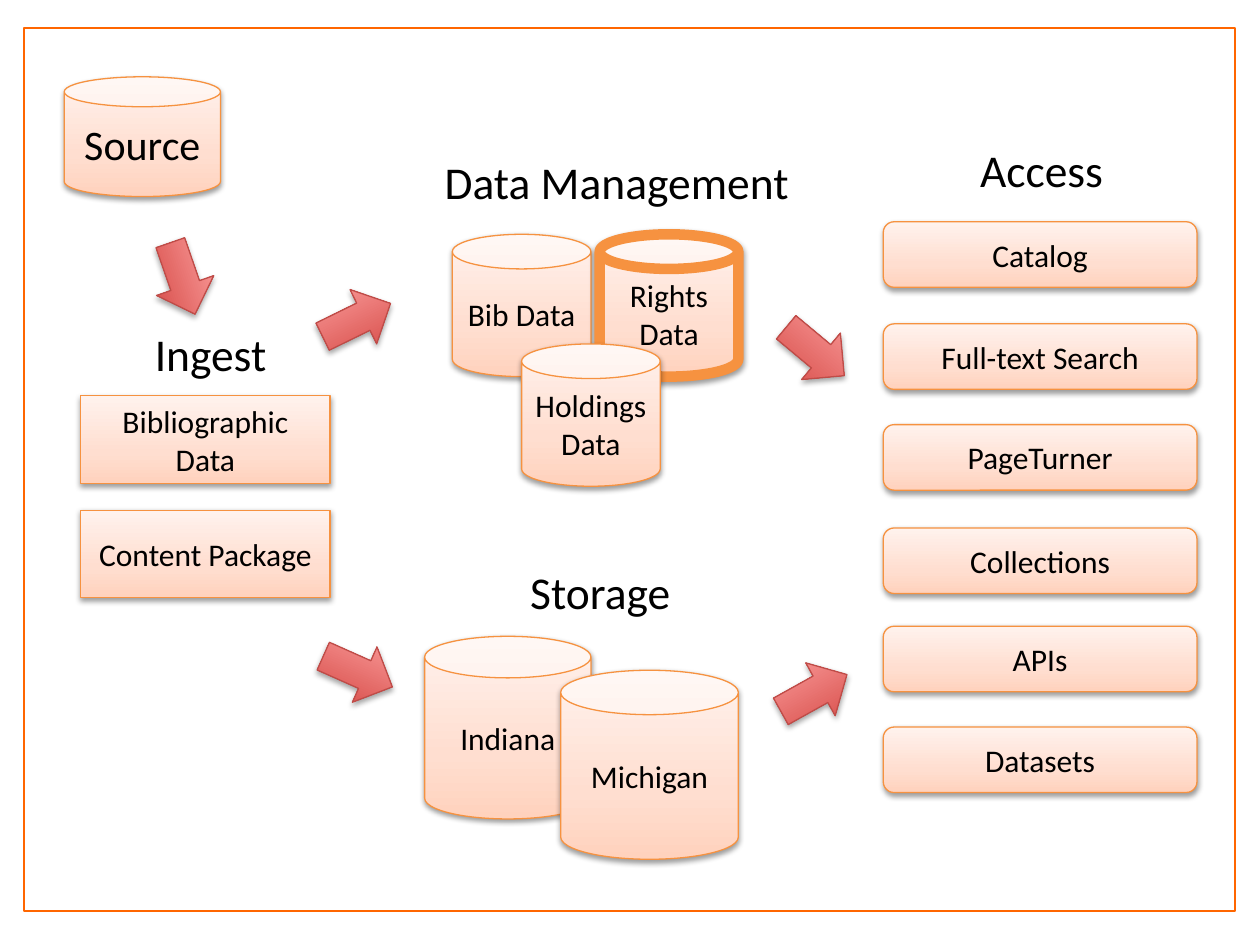
"""Build a slide showing a digital library's flow from source to access."""
from copy import deepcopy

from pptx import Presentation
from pptx.dml.color import RGBColor
from pptx.enum.shapes import MSO_SHAPE as Shape
from pptx.enum.text import MSO_ANCHOR, MSO_AUTO_SIZE, PP_ALIGN
from pptx.oxml import parse_xml
from pptx.oxml.ns import nsdecls
from pptx.util import Inches, Pt

BLACK = RGBColor(0x00, 0x00, 0x00)
WHITE = RGBColor(0xFF, 0xFF, 0xFF)
FRAME_ORANGE = RGBColor(0xFF, 0x66, 0x00)
ORANGE = RGBColor(0xF6, 0x92, 0x40)
RED = RGBColor(0xBF, 0x4C, 0x48)
PEACH_STOPS = [
    (0, RGBColor(0xFF, 0xD2, 0xBD)),
    (0.35, RGBColor(0xFF, 0xDE, 0xD0)),
    (1, RGBColor(0xFF, 0xF2, 0xED)),
]
RED_STOPS = [(0, RGBColor(0xD1, 0x40, 0x3C)), (1, RGBColor(0xFF, 0xA6, 0xA5))]
FONT = "Calibri"


def add_gradient_shape(kind, place, stops, line_color, line_width, opacity, distance):
    shape = slide.shapes.add_shape(kind, *map(Inches, place))
    shape.fill.gradient()
    shape.fill.gradient_angle = 90
    stop_list = shape._element.spPr.find(".//{*}gsLst")
    while len(stop_list) < len(stops):
        stop_list.append(deepcopy(stop_list[0]))
    for gradient_stop, (position, color) in zip(shape.fill.gradient_stops, stops):
        gradient_stop.position = position
        gradient_stop.color.rgb = color
    shape.line.color.rgb = line_color
    shape.line.width = Pt(line_width)
    shape.shadow.inherit = False
    shape._element.spPr.find("{*}effectLst").append(parse_xml(
        f'<a:outerShdw {nsdecls("a")} blurRad="40000" dist="{distance}" '
        'dir="5400000" rotWithShape="0"><a:srgbClr val="000000">'
        f'<a:alpha val="{opacity * 1000}"/></a:srgbClr></a:outerShdw>'))
    return shape


def write_text(shape, text, size, alignment):
    frame = shape.text_frame
    frame.word_wrap = True
    frame.text = text
    paragraph = frame.paragraphs[0]
    paragraph.alignment = alignment
    font = paragraph.runs[0].font
    font.name = FONT
    font.size = Pt(size)
    font.color.rgb = BLACK


presentation = Presentation()
presentation.slide_width = Inches(10)
presentation.slide_height = Inches(7.5)
slide = presentation.slides.add_slide(presentation.slide_layouts[6])

border = slide.shapes.add_shape(
    Shape.RECTANGLE, Inches(0.19), Inches(0.22), Inches(9.61), Inches(7.01))
border.shadow.inherit = False
border.fill.solid()
border.fill.fore_color.rgb = WHITE
border.line.color.rgb = FRAME_ORANGE
border.line.width = Pt(1)

headings = [
    ("Data Management", 3.43, 1.17, 3.58),
    ("Storage", 4.11, 4.43, 1.77),
    ("Access", 7.68, 1.08, 1.99),
    ("Ingest", 1.13, 2.54, 1.61),
]
for text, left, top, width in headings:
    heading = slide.shapes.add_textbox(
        Inches(left), Inches(top), Inches(width), Inches(0.54))
    write_text(heading, text, 26, PP_ALIGN.LEFT)
    heading.text_frame.auto_size = MSO_AUTO_SIZE.SHAPE_TO_FIT_TEXT

components = [
    ("Source", Shape.CAN, (0.51, 0.61, 1.24, 0.95), 24, 0.75),
    ("Bibliographic Data", Shape.RECTANGLE, (0.64, 3.14, 1.98, 0.7), 18, 0.75),
    ("Content Package", Shape.RECTANGLE, (0.64, 4.05, 1.98, 0.69), 18, 0.75),
    ("Indiana", Shape.CAN, (3.37, 5.05, 1.32, 1.45), 18, 0.75),
    ("Michigan", Shape.CAN, (4.45, 5.32, 1.41, 1.5), 18, 0.75),
    ("Bib Data", Shape.CAN, (3.59, 1.86, 1.1, 1.13), 18, 0.75),
    ("Rights Data", Shape.CAN, (4.76, 1.86, 1.1, 1.13), 18, 6),
    ("Holdings Data", Shape.CAN, (4.14, 2.73, 1.1, 1.13), 18, 0.75),
]
access_services = [
    ("Catalog", 1.76),
    ("Full-text Search", 2.57),
    ("PageTurner", 3.37),
    ("Collections", 4.19),
    ("APIs", 4.97),
    ("Datasets", 5.77),
]
for text, top in access_services:
    components.append(
        (text, Shape.ROUNDED_RECTANGLE, (7.01, top, 2.49, 0.52), 18, 0.75))

for text, kind, place, size, line_width in components:
    component = add_gradient_shape(
        kind, place, PEACH_STOPS, ORANGE, line_width, 38, 20000)
    write_text(component, text, size, PP_ALIGN.CENTER)
    component.text_frame.vertical_anchor = MSO_ANCHOR.MIDDLE

flow_arrows = [
    (1.15, 1.97, 70.9),
    (2.53, 2.3, 333.9),
    (2.54, 5.09, 24),
    (6.17, 2.55, 39.8),
    (6.16, 5.26, 330.9),
]
for left, top, rotation in flow_arrows:
    arrow = add_gradient_shape(
        Shape.RIGHT_ARROW, (left, top, 0.6, 0.48), RED_STOPS, RED, 0.75, 35, 23000)
    arrow.rotation = rotation

presentation.save("out.pptx")
